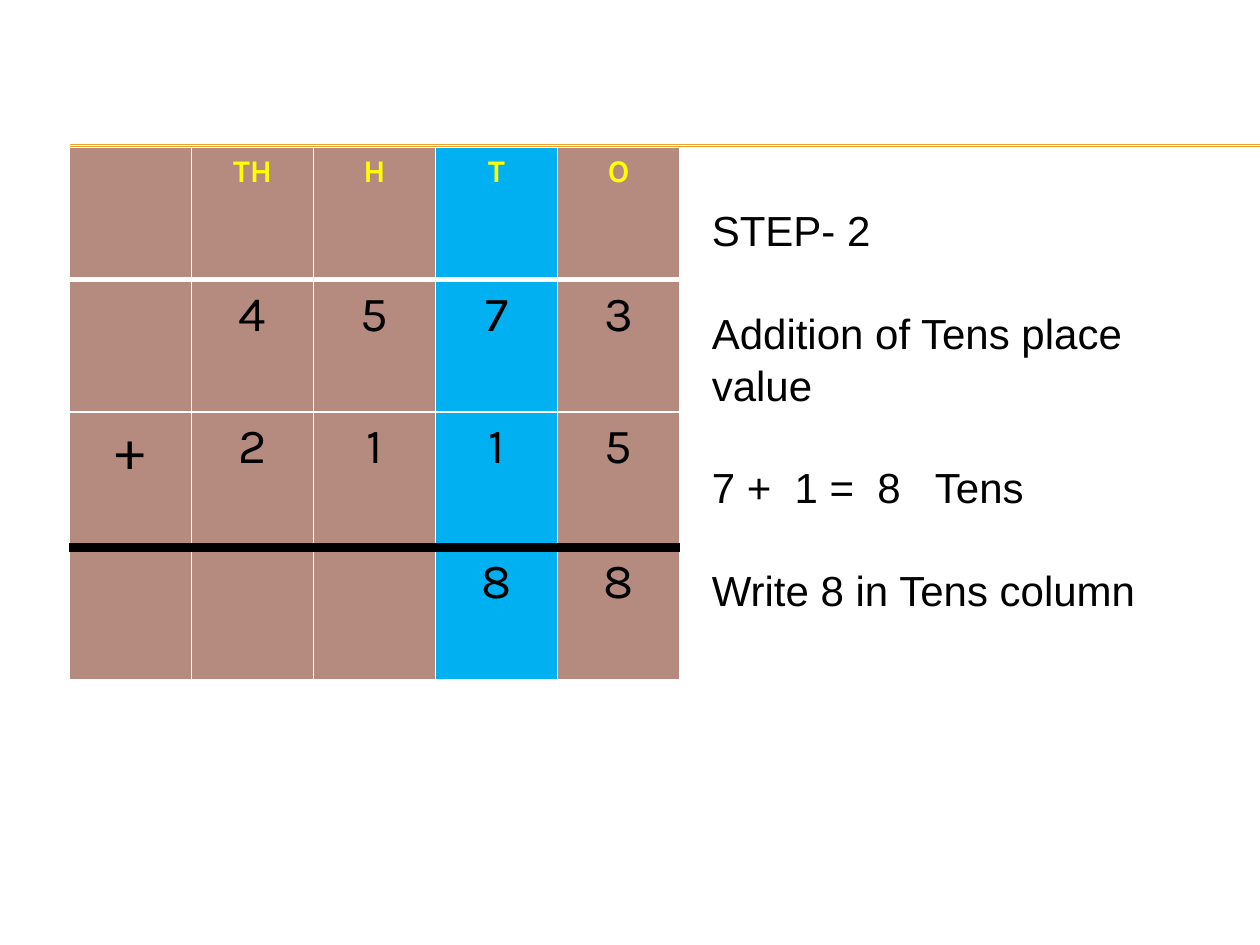
from lxml.etree import SubElement
from pptx import Presentation
from pptx.dml.color import RGBColor
from pptx.enum.shapes import MSO_CONNECTOR as Conn
from pptx.enum.text import MSO_AUTO_SIZE as Fit, PP_ALIGN as Align
from pptx.oxml import parse_xml
from pptx.oxml.ns import nsdecls, qn
from pptx.util import Cm, Pt

GOLD = RGBColor(0xF0, 0xA2, 0x2E)
BROWN = RGBColor(0xB5, 0x8B, 0x80)
BLUE = RGBColor(0x00, 0xB0, 0xF0)
YELLOW = RGBColor(0xFF, 0xFF, 0x00)
WHITE = RGBColor(0xFF, 0xFF, 0xFF)
BLACK = RGBColor(0x00, 0x00, 0x00)

WIDE, HIGH = 25.4, 19.05
SUM = [
    ["", "TH", "H", "T", "O"],
    ["", "4", "5", "7", "3"],
    ["+", "2", "1", "1", "5"],
    ["", "", "", "8", "8"],
]
ROWS = [2.67, 2.67, 2.72, 2.67]
COL = 2.46
TENS = 3
# Horizontal rules from the top edge to the bottom edge: colour, points
RULES = [(WHITE, 1), (WHITE, 3), (WHITE, 1), (BLACK, 6), (WHITE, 1)]
STEPS = [
    "STEP- 2",
    "Addition of Tens place value",
    "7 +  1 =  8   Tens",
    "Write 8 in Tens column",
]


def add_line(slide, top):
    line = slide.shapes.add_connector(
        Conn.STRAIGHT, Cm(1.42), Cm(top), Cm(WIDE), Cm(top))
    line.line.color.rgb = GOLD
    line.line.width = Pt(0.75)
    SubElement(line._element.spPr, qn("a:effectLst"))


def set_edges(cell, row):
    side = (WHITE, 1)
    edges = {"L": side, "R": side, "T": RULES[row], "B": RULES[row + 1]}
    props = cell._tc.get_or_add_tcPr()
    for spot, (name, (color, width)) in enumerate(edges.items()):
        props.insert(spot, parse_xml(
            f'<a:ln{name} {nsdecls("a")} w="{Pt(width)}"><a:solidFill>'
            f'<a:srgbClr val="{color}"/></a:solidFill></a:ln{name}>'))


def set_cell(cell, text, row, col):
    cell.fill.solid()
    cell.fill.fore_color.rgb = BLUE if col == TENS else BROWN
    set_edges(cell, row)
    if not text:
        return
    cell.text_frame.text = text
    par = cell.text_frame.paragraphs[0]
    par.alignment = Align.CENTER
    head = row == 0
    font = par.runs[0].font
    font.name = "Karla"
    font.bold = head
    font.size = Pt(18 if head else 32 if text == "+" else 28)
    font.color.rgb = YELLOW if head else BLACK


def add_sum(slide):
    count = len(SUM[0])
    table = slide.shapes.add_table(
        len(SUM), count, Cm(1.4), Cm(2.97),
        Cm(COL * count), Cm(sum(ROWS))).table
    table.first_row = table.horz_banding = False
    for col in table.columns:
        col.width = Cm(COL)
    for row, texts in enumerate(SUM):
        table.rows[row].height = Cm(ROWS[row])
        for col, text in enumerate(texts):
            set_cell(table.cell(row, col), text, row, col)


def add_steps(slide):
    box = slide.shapes.add_textbox(Cm(14.1), Cm(3.96), Cm(9.73), Cm(8.46))
    frame = box.text_frame
    frame.word_wrap = True
    frame.auto_size = Fit.SHAPE_TO_FIT_TEXT
    for spot, text in enumerate(STEPS):
        par = frame.add_paragraph() if spot else frame.paragraphs[0]
        par.text = text
        par.line_spacing = 1.04
        if spot:
            par.space_before = Pt(28.6)
        font = par.runs[0].font
        font.name = "Arial"
        font.size = Pt(24)
        font.color.rgb = BLACK


def main():
    deck = Presentation()
    deck.slide_width, deck.slide_height = Cm(WIDE), Cm(HIGH)
    slide = deck.slides.add_slide(deck.slide_layouts[6])
    # Gold double rule across the top
    for top in (2.92, 2.95):
        add_line(slide, top)
    # Place value table
    add_sum(slide)
    # Working steps
    add_steps(slide)
    deck.save("out.pptx")


if __name__ == "__main__":
    main()
